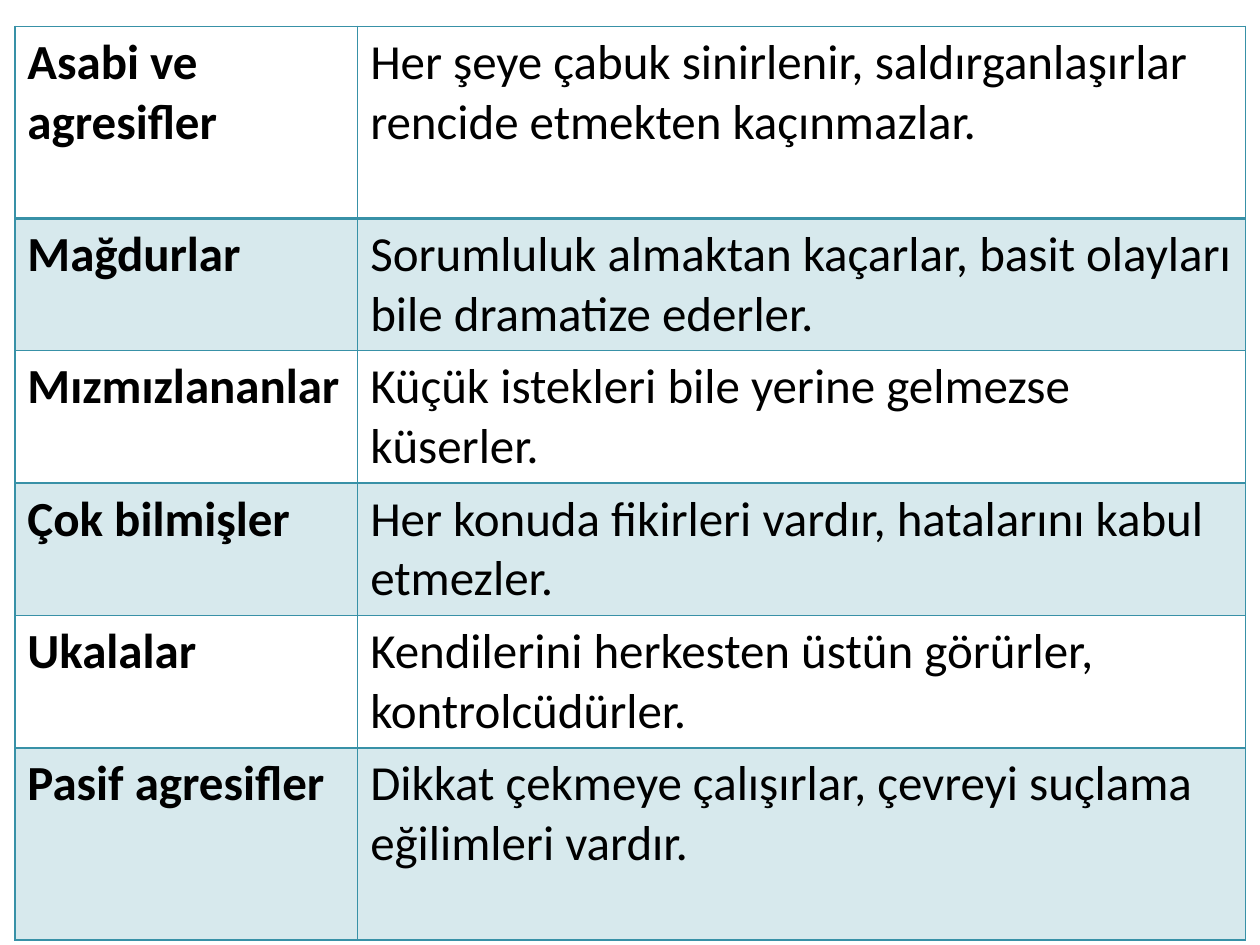
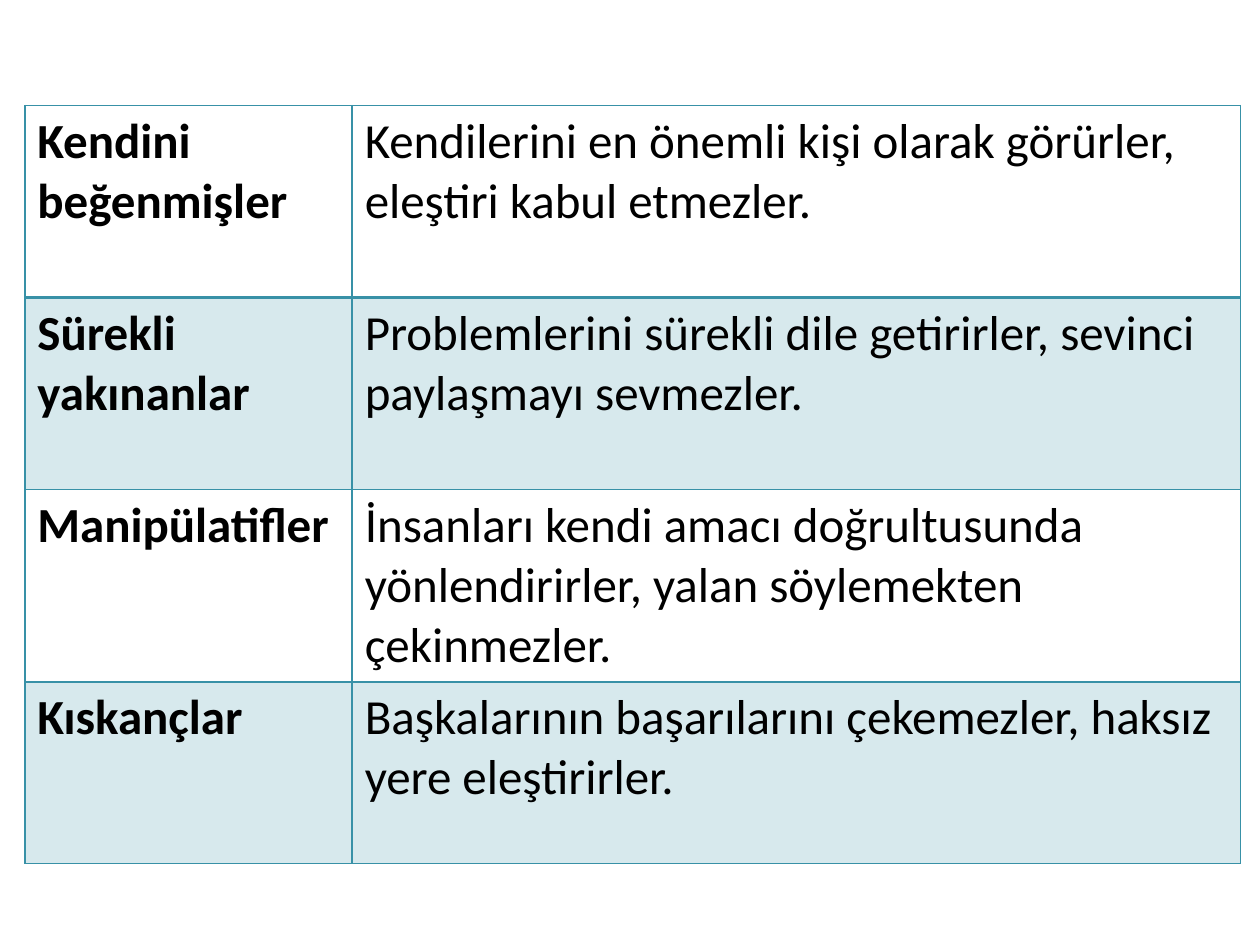
from lxml import etree
from pptx import Presentation
from pptx.dml.color import RGBColor
from pptx.oxml.ns import qn
from pptx.util import Cm, Pt

TEAL = "3891A7"
BLACK = "000000"
WHITE = "FFFFFF"
FONT = "Calibri"
TEXT_SIZE = 28
BAND_OPACITY = 20
THIN, THICK = 1, 2
BLANK_LAYOUT = 6

# Row heights in centimetres
TALL, SHORT, LAST = 3.87, 2.67, 3.66

DIFFICULT_PEOPLE = [
    ("Asabi ve agresifler",
     "Her şeye çabuk sinirlenir, saldırganlaşırlar rencide etmekten kaçınmazlar.", TALL),
    ("Mağdurlar",
     "Sorumluluk almaktan kaçarlar, basit olayları bile dramatize ederler.", SHORT),
    ("Mızmızlananlar",
     "Küçük istekleri bile yerine gelmezse küserler.", SHORT),
    ("Çok bilmişler",
     "Her konuda fikirleri vardır, hatalarını kabul etmezler.", SHORT),
    ("Ukalalar",
     "Kendilerini herkesten üstün görürler, kontrolcüdürler.", SHORT),
    ("Pasif agresifler",
     "Dikkat çekmeye çalışırlar, çevreyi suçlama eğilimleri vardır.", TALL),
]

MORE_DIFFICULT_PEOPLE = [
    ("Kendini beğenmişler",
     "Kendilerini en önemli kişi olarak görürler, eleştiri kabul etmezler.", TALL),
    ("Sürekli yakınanlar",
     "Problemlerini sürekli dile getirirler, sevinci paylaşmayı sevmezler.", TALL),
    ("Manipülatifler",
     "İnsanları kendi amacı doğrultusunda yönlendirirler, yalan söylemekten çekinmezler.", TALL),
    ("Kıskançlar",
     "Başkalarının başarılarını çekemezler, haksız yere eleştirirler.", LAST),
]


def color(hex_code):
    return RGBColor.from_string(hex_code)


def set_borders(cell, top, bottom):
    """Draw teal cell borders; top and bottom widths are in points."""
    properties = cell._tc.get_or_add_tcPr()
    sides = [("lnL", THIN), ("lnR", THIN), ("lnT", top), ("lnB", bottom)]
    for position, (side, width) in enumerate(sides):
        line = etree.Element(qn(f"a:{side}"), w=str(Pt(width)))
        fill = etree.SubElement(line, qn("a:solidFill"))
        etree.SubElement(fill, qn("a:srgbClr"), val=TEAL)
        properties.insert(position, line)


def set_band(cell, banded):
    if not banded:
        cell.fill.background()
        return
    cell.fill.solid()
    cell.fill.fore_color.rgb = color(TEAL)
    shade = cell._tc.tcPr.find(f"{qn('a:solidFill')}/{qn('a:srgbClr')}")
    etree.SubElement(shade, qn("a:alpha"), val=str(BAND_OPACITY * 1000))


def set_text(cell, text, bold):
    cell.text_frame.text = text
    font = cell.text_frame.paragraphs[0].runs[0].font
    font.name = FONT
    font.size = Pt(TEXT_SIZE)
    font.bold = bold
    font.color.rgb = color(BLACK)


def add_people_table(page, left, top, column_widths, people):
    """Add a table with one type of person and their behaviour per row."""
    heights = [height for _, _, height in people]
    frame = page.shapes.add_table(
        len(people), len(column_widths), Cm(left), Cm(top),
        Cm(sum(column_widths)), Cm(sum(heights)))
    table = frame.table
    table.first_row = False
    table.horz_banding = False
    for column, width in zip(table.columns, column_widths):
        column.width = Cm(width)
    for index, (kind, behaviour, height) in enumerate(people):
        row = table.rows[index]
        row.height = Cm(height)
        for cell, text, bold in zip(row.cells, (kind, behaviour), (True, False)):
            set_text(cell, text, bold)
            set_band(cell, index % 2 == 1)
            # The first row is closed by a heavier rule
            set_borders(cell, THICK if index == 1 else THIN,
                        THICK if index == 0 else THIN)


def add_page(deck):
    page = deck.slides.add_slide(deck.slide_layouts[BLANK_LAYOUT])
    page.background.fill.solid()
    page.background.fill.fore_color.rgb = color(WHITE)
    return page


def main():
    deck = Presentation()
    deck.slide_width, deck.slide_height = Cm(25.4), Cm(19.05)

    add_people_table(add_page(deck), 0.3, 0.53, (6.91, 17.9), DIFFICULT_PEOPLE)
    add_people_table(add_page(deck), 0.5, 2.13, (6.6, 17.91), MORE_DIFFICULT_PEOPLE)

    deck.save("out.pptx")


if __name__ == "__main__":
    main()
